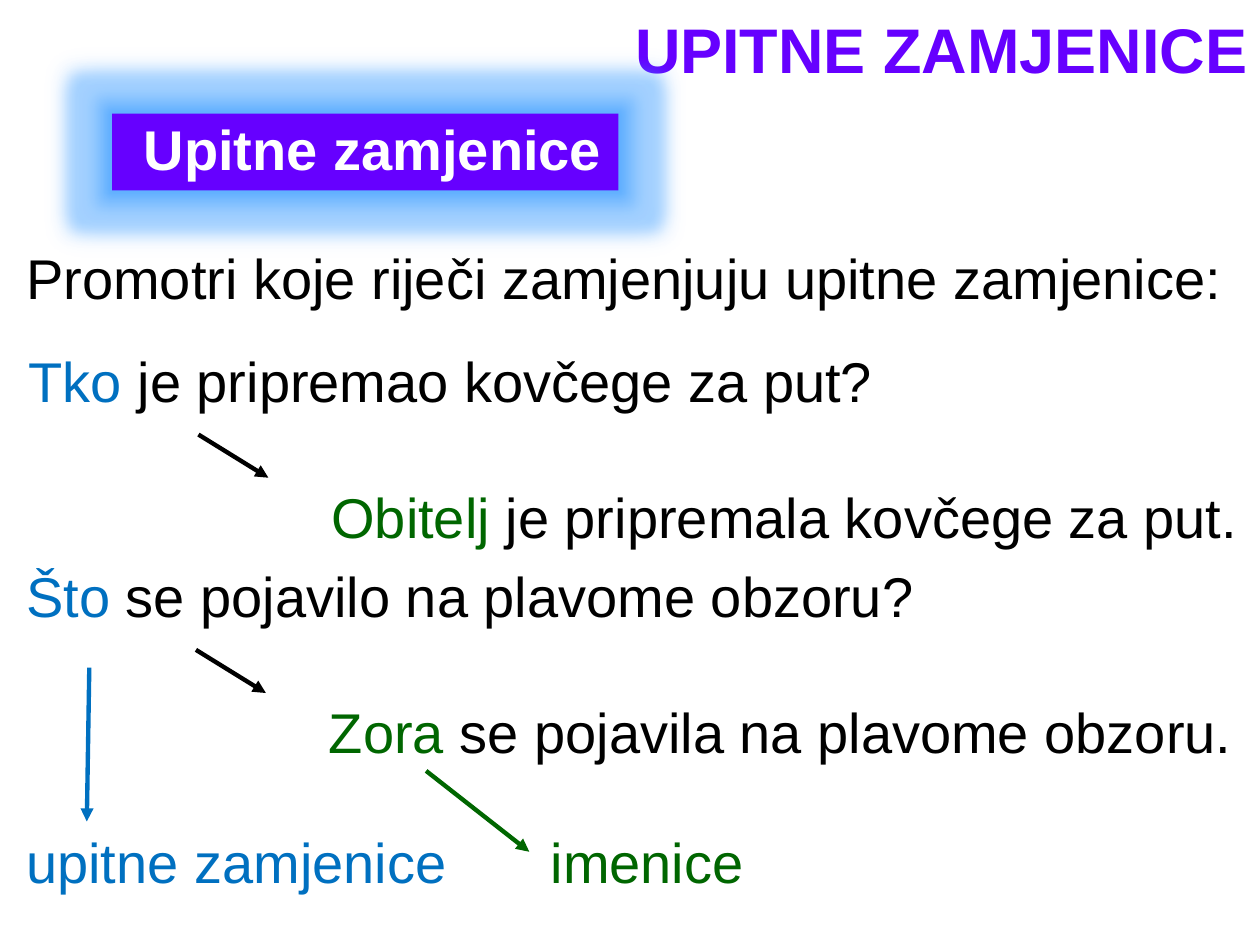
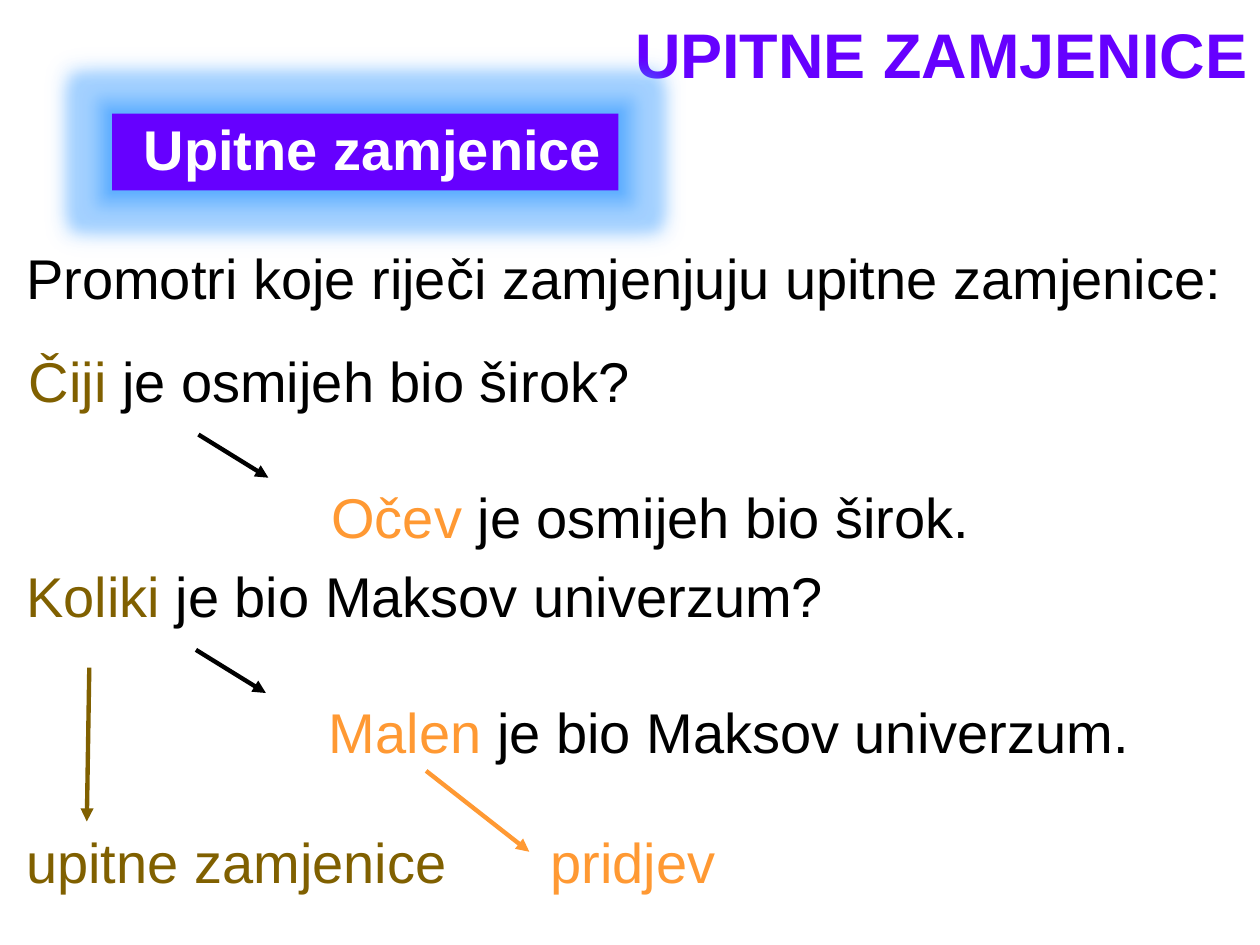
"""Builds two slides about the words that interrogative pronouns replace."""
from lxml.etree import SubElement
from pptx import Presentation
from pptx.dml.color import RGBColor
from pptx.enum.shapes import MSO_CONNECTOR, MSO_SHAPE
from pptx.enum.text import MSO_ANCHOR, PP_ALIGN
from pptx.oxml import parse_xml
from pptx.oxml.ns import nsdecls, qn
from pptx.util import Cm, Pt

PURPLE = RGBColor(0x66, 0x00, 0xFF)
WHITE = RGBColor(0xFF, 0xFF, 0xFF)
BLACK = RGBColor(0x00, 0x00, 0x00)
BLUE = RGBColor(0x00, 0x70, 0xC0)
GREEN = RGBColor(0x00, 0x66, 0x00)
OLIVE = RGBColor(0x80, 0x60, 0x00)
ORANGE = RGBColor(0xFF, 0x99, 0x33)

FONT = "Arial"
LINE_HEIGHT = 1.63
LEFT = 0.28
BOTTOM_TOP = 16.56
GLOW = f"""<a:effectLst {nsdecls('a')}>
  <a:glow rad="228600"><a:srgbClr val="3399FF"><a:alpha val="40000"/></a:srgbClr></a:glow>
  <a:outerShdw blurRad="63500" sx="102000" sy="112000" algn="ctr" rotWithShape="0">
    <a:srgbClr val="3399FF"><a:alpha val="40000"/></a:srgbClr></a:outerShdw>
</a:effectLst>"""

LESSONS = [
    {
        "title_top": -0.05,
        "pronoun_color": BLUE,
        "answer_color": GREEN,
        "pairs": [
            (("Tko", " je pripremao kovčege za put?"),
             ("Obitelj", " je pripremala kovčege za put.")),
            (("Što", " se pojavilo na plavome obzoru?"),
             ("Zora", " se pojavila na plavome obzoru.")),
        ],
        "word_class": ("imenice", 4.45),
    },
    {
        "title_top": 0.05,
        "pronoun_color": OLIVE,
        "answer_color": ORANGE,
        "pairs": [
            (("Čiji", " je osmijeh bio širok?"),
             ("Očev", " je osmijeh bio širok.")),
            (("Koliki", " je bio Maksov univerzum?"),
             ("Malen", " je bio Maksov univerzum.")),
        ],
        "word_class": ("pridjev", 3.86),
    },
]
PAIR_PLACES = [(0.33, 6.86), (LEFT, 11.2)]


def add_text(slide, left, top, width, height, parts, size=32, bold=False,
             anchor=MSO_ANCHOR.TOP, wrap=True):
    box = slide.shapes.add_textbox(Cm(left), Cm(top), Cm(width), Cm(height))
    frame = box.text_frame
    frame.word_wrap = wrap
    frame.vertical_anchor = anchor
    for text, color in parts:
        run = frame.paragraphs[0].add_run()
        run.text = text
        run.font.name = FONT
        run.font.size = Pt(size)
        run.font.bold = bold
        run.font.color.rgb = color
    return frame


def add_arrow(slide, start_x, start_y, end_x, end_y, color):
    arrow = slide.shapes.add_connector(
        MSO_CONNECTOR.STRAIGHT, Cm(start_x), Cm(start_y), Cm(end_x), Cm(end_y))
    arrow.line.color.rgb = color
    arrow.line.width = Pt(2.5)
    SubElement(arrow.line._get_or_add_ln(), qn("a:tailEnd"), type="triangle")
    SubElement(arrow._element.spPr, qn("a:effectLst"))


presentation = Presentation()
presentation.slide_width = Cm(25.4)
presentation.slide_height = Cm(19.05)

for lesson in LESSONS:
    slide = presentation.slides.add_slide(presentation.slide_layouts[6])
    pronoun_color = lesson["pronoun_color"]
    answer_color = lesson["answer_color"]

    title = add_text(slide, 5.66, lesson["title_top"], 19.74, 1.93,
                     [("UPITNE ZAMJENICE", PURPLE)], 36, True, MSO_ANCHOR.BOTTOM)
    title.paragraphs[0].alignment = PP_ALIGN.RIGHT
    title.paragraphs[0].line_spacing = 0.9

    band = slide.shapes.add_shape(
        MSO_SHAPE.RECTANGLE, Cm(2.26), Cm(2.29), Cm(10.21), Cm(1.55))
    band.fill.solid()
    band.fill.fore_color.rgb = PURPLE
    band.line.fill.background()
    band._element.spPr.append(parse_xml(GLOW))

    heading = add_text(slide, 2.72, 1.63, 11.18, 2.13,
                       [("Upitne zamjenice", WHITE)], 32, True, MSO_ANCHOR.BOTTOM)
    heading.margin_left = heading.margin_right = Cm(0.18)
    heading.margin_top = heading.margin_bottom = Cm(0.1)
    heading.paragraphs[0].space_before = Pt(10)

    add_text(slide, LEFT, 4.78, 25.12, LINE_HEIGHT,
             [("Promotri koje riječi zamjenjuju upitne zamjenice:", BLACK)])

    for (left, top), (question, answer) in zip(PAIR_PLACES, lesson["pairs"]):
        add_text(slide, left, top, 25.02, LINE_HEIGHT,
                 zip(question, (pronoun_color, BLACK)))
        add_text(slide, left + 6.1, top + 2.72, 18.97, LINE_HEIGHT,
                 zip(answer, (answer_color, BLACK)), anchor=MSO_ANCHOR.MIDDLE)
        add_arrow(slide, left + 3.67, top + 1.9, left + 5.08, top + 2.77, BLACK)

    add_arrow(slide, 1.8, 13.46, 1.75, BOTTOM_TOP, pronoun_color)
    add_text(slide, LEFT, BOTTOM_TOP, 9.37, LINE_HEIGHT,
             [("upitne zamjenice", pronoun_color)], wrap=False)
    word_class, word_width = lesson["word_class"]
    add_text(slide, 10.85, BOTTOM_TOP, word_width, LINE_HEIGHT,
             [(word_class, answer_color)], wrap=False)
    add_arrow(slide, 8.59, 15.54, 10.67, 17.17, answer_color)

presentation.save("out.pptx")
